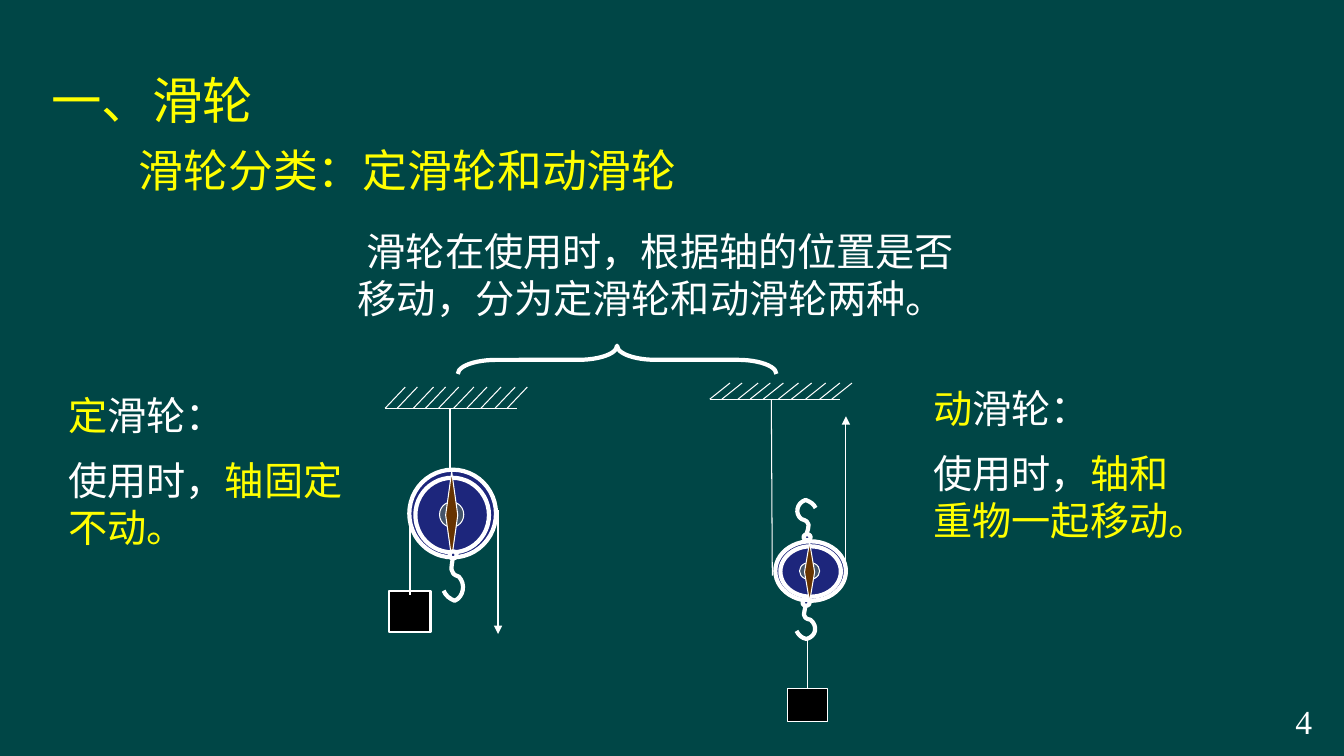
from lxml.etree import SubElement as Sub
from pptx import Presentation
from pptx.dml.color import RGBColor as RGB
from pptx.enum.shapes import MSO_CONNECTOR as CON, MSO_SHAPE as SHP
from pptx.enum.text import PP_ALIGN as AL
from pptx.oxml.ns import qn
from pptx.util import Pt

PX = 9144
HUE = {"bg": "004646", "gold": "FFFF00", "white": "FFFFFF", "black": "000000",
       "blue": "1D267C", "slate": "44546A", "brown": "663300"}
RGBS = {k: RGB.from_string(v) for k, v in HUE.items()}
SANS, SERIF = "Noto Sans CJK SC", "Times New Roman"

deck = Presentation()
deck.slide_width, deck.slide_height = 1333 * PX, 750 * PX
slide = deck.slides.add_slide(deck.slide_layouts[6])
slide.background.fill.solid()
slide.background.fill.fore_color.rgb = RGBS["bg"]


def write(box, size, paras, font=SANS, align=AL.LEFT, indent=0):
    frame = slide.shapes.add_textbox(*[n * PX for n in box]).text_frame
    frame.word_wrap = True
    for i, runs in enumerate(paras):
        para = frame.add_paragraph() if i else frame.paragraphs[0]
        para.alignment = align
        if i:
            para.space_before = Pt(13)
        if indent:
            para._p.get_or_add_pPr().set("indent", str(indent * PX))
        for words, hue in runs:
            run = para.add_run()
            run.text = words
            run.font.size = Pt(size)
            run.font.name = font
            run.font.color.rgb = RGBS[hue]
            Sub(run._r.get_or_add_rPr(), qn("a:ea")).set("typeface", font)


def draw(group, ends, width, arrow=False):
    line = group.shapes.add_connector(CON.STRAIGHT, *[n * PX for n in ends])
    line.line.color.rgb = RGBS["white"]
    line.line.width = Pt(width)
    if arrow:
        Sub(line.line._get_or_add_ln(), qn("a:tailEnd")).set("type", "triangle")
    Sub(line._element.spPr, qn("a:effectLst"))
    return line


write((41, 64, 240, 71), 36, [[("一、滑轮", "gold")]])
write((125, 137, 559, 64), 32, [[("滑轮分类：定滑轮和动滑轮", "gold")]], align=AL.CENTER)
write((345, 221, 643, 104), 28,
      [[("滑轮在使用时，根据轴的位置是否移动，分为定滑轮和动滑轮两种。", "white")]], indent=9)

brace = slide.shapes.add_shape(SHP.LEFT_BRACE, 598 * PX, 199 * PX, 28 * PX, 316 * PX)
brace.rotation = 90
brace.adjustments[0] = 1.37
brace.fill.background()
brace.line.color.rgb = RGBS["white"]
brace.line.width = Pt(3)
brace.shadow.inherit = False

write((58, 383, 306, 175), 28, [
    [("定", "gold"), ("滑轮：", "white")],
    [("使用时，", "white"), ("轴固定不动。", "gold")]])
write((916, 376, 273, 175), 28, [
    [("动", "gold"), ("滑轮：", "white")],
    [("使用时，", "white"), ("轴和重物一起移动。", "gold")]])

TICKS = (0, 12, 28, 40, 53, 68, 81, 95, 109, 121)
FIXED = {
    "load": (386, 586, 41, 41), "thin": 1.5,
    "ropes": [(407, 508, 407, 590), (446, 405, 446, 467)],
    "pull": (494, 506, 494, 629),
    "beam": (382, 405, 131, 21),
    "wheel": [(406, 466, 86, 87), (412, 474, 73, 74)],
    "hub": (436, 498, 24, 25), "blade": (442, 468, 12, 86),
    "rings": [(446, 547, 7, 7)],
    "hooks": [[(449, 554), (448, 563), (445, 569), (455, 572), (462, 579),
               (460, 592), (451, 596), (446, 594), (442, 591), (440, 586)]],
}
MOVING = {
    "load": (781, 683, 40, 33), "thin": 0.75,
    "ropes": [(765, 396, 766, 571)],
    "pull": (839, 571, 839, 413),
    "beam": (704, 396, 129, 16),
    "wheel": [(769, 537, 70, 59), (774, 542, 60, 50)],
    "hub": (793, 558, 20, 17), "blade": (798, 538, 10, 59),
    "rings": [(796, 595, 7, 6), (797, 530, 7, 6)],
    "hooks": [[(799, 601), (798, 608), (794, 613), (804, 615), (811, 621),
               (810, 631), (800, 634), (795, 633), (792, 630), (790, 626)],
              [(800, 530), (802, 522), (805, 518), (795, 515), (788, 510),
               (790, 499), (799, 496), (804, 498), (807, 500), (809, 504)]],
}

for rig in (FIXED, MOVING):
    group = slide.shapes.add_group_shape()
    thin = rig["thin"]
    left, top, wide, rise = rig["beam"]
    draw(group, (left, top, left + wide, top), 0.75)
    for tick in TICKS:
        draw(group, (left + tick + 20, top - rise, left + tick, top), 0.75)
    parts = [(SHP.RECTANGLE, rig["load"], "black", thin)]
    parts += [(SHP.OVAL, box, "blue", 3) for box in rig["wheel"]]
    parts += [(SHP.OVAL, rig["hub"], "slate", 0.75),
              (SHP.DIAMOND, rig["blade"], "brown", 0.75)]
    parts += [(SHP.OVAL, box, "blue", 3) for box in rig["rings"]]
    for kind, box, hue, width in parts:
        part = group.shapes.add_shape(kind, *[n * PX for n in box])
        part.fill.solid()
        part.fill.fore_color.rgb = RGBS[hue]
        part.line.color.rgb = RGBS["white"]
        part.line.width = Pt(width)
        part.shadow.inherit = False
        if kind == SHP.RECTANGLE:
            load = part
            for ends in rig["ropes"]:
                draw(group, ends, thin)
            draw(group, rig["pull"], thin, True)
    for dots in rig["hooks"]:
        pen = group.shapes.build_freeform(*dots[0], scale=PX)
        pen.add_line_segments(dots[1:], close=False)
        hook = pen.convert_to_shape()
        hook.fill.background()
        hook.line.color.rgb = RGBS["white"]
        hook.line.width = Pt(3)
        hook.shadow.inherit = False
        curve = next(hook._element.iter(qn("a:path")))
        steps = curve.findall(qn("a:lnTo"))
        for i in range(0, len(steps), 3):
            bend = Sub(curve, qn("a:cubicBezTo"))
            for step in steps[i:i + 3]:
                bend.append(step[0])
                curve.remove(step)
    if rig is MOVING:
        cord = draw(group, (801, 633, 801, 683), thin)
        cord.end_connect(load, 0)

write((1275, 690, 48, 50), 24, [[("4", "white")]], font=SERIF)

deck.save("out.pptx")
